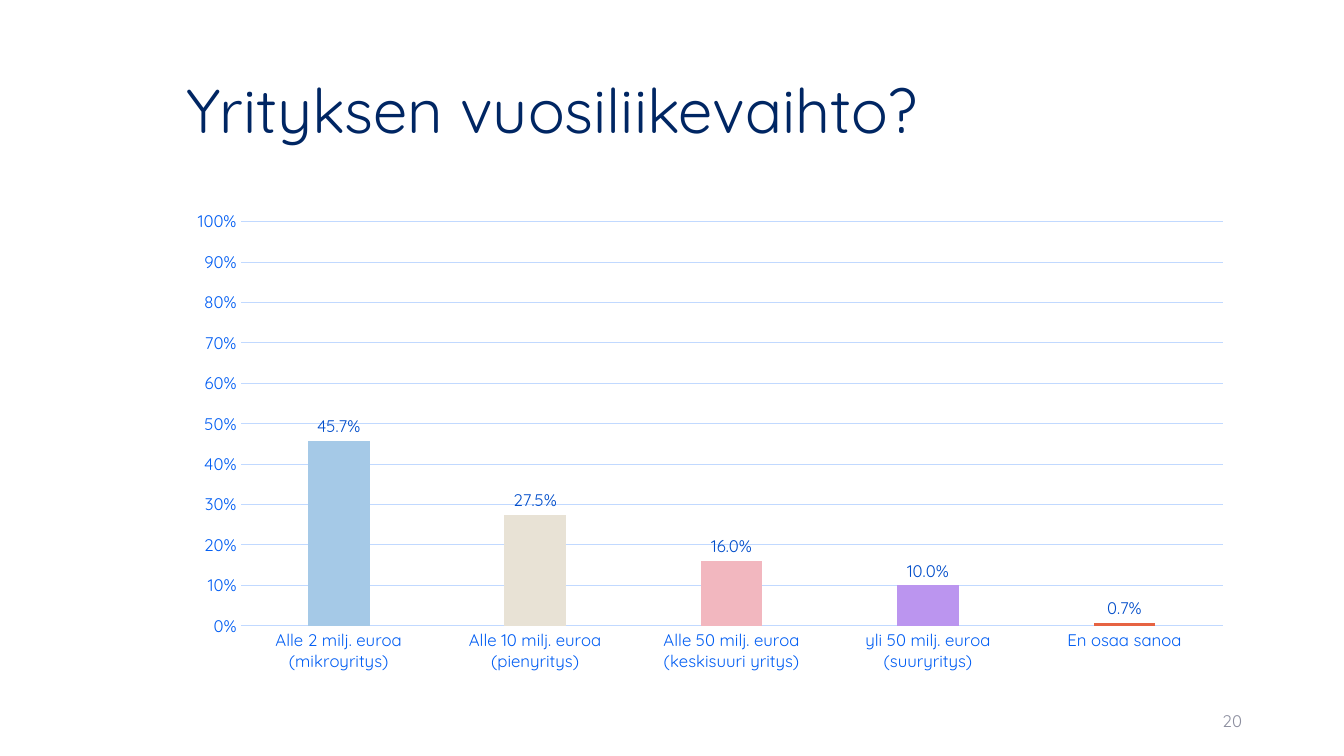
from pptx import Presentation
from pptx.chart.data import CategoryChartData
from pptx.dml.color import RGBColor
from pptx.enum.chart import XL_CHART_TYPE, XL_LABEL_POSITION, XL_TICK_MARK
from pptx.enum.text import MSO_ANCHOR, PP_ALIGN
from pptx.util import Cm, Pt

COLUMN = XL_CHART_TYPE.COLUMN_CLUSTERED
OUTSIDE_END = XL_LABEL_POSITION.OUTSIDE_END
NO_TICK = XL_TICK_MARK.NONE
MIDDLE, TOP = MSO_ANCHOR.MIDDLE, MSO_ANCHOR.TOP
LEFT, RIGHT = PP_ALIGN.LEFT, PP_ALIGN.RIGHT

FONT = "Quicksand"
NAVY = RGBColor(0x00, 0x26, 0x63)
AXIS_BLUE = RGBColor(0x00, 0x5D, 0xF3)
LABEL_BLUE = RGBColor(0x00, 0x4D, 0xCA)
GRID_BLUE = RGBColor(0xC1, 0xD9, 0xFF)
GREY = RGBColor(0x8C, 0x8E, 0x9F)
SKY = RGBColor(0xA5, 0xC9, 0xE7)
SAND = RGBColor(0xE8, 0xE2, 0xD5)
PINK = RGBColor(0xF2, 0xB7, 0xBF)
VIOLET = RGBColor(0xBB, 0x95, 0xEF)
ORANGE = RGBColor(0xE6, 0x63, 0x42)

TITLE = "Yrityksen vuosiliikevaihto?"
PAGE_NUMBER = "20"
TURNOVER = [
    ("Alle 2 milj. euroa (mikroyritys)", 0.457, SKY),
    ("Alle 10 milj. euroa (pienyritys)", 0.275, SAND),
    ("Alle 50 milj. euroa (keskisuuri yritys)", 0.16, PINK),
    ("yli 50 milj. euroa (suuryritys)", 0.1, VIOLET),
    ("En osaa sanoa", 0.007, ORANGE),
]
CONTENT_LEFT, CONTENT_WIDTH = Cm(4.45), Cm(26.9)


def style_font(font, size, color):
    font.name = FONT
    font.size = Pt(size)
    font.color.rgb = color


def style_line(line):
    line.color.rgb = GRID_BLUE
    line.width = Pt(0.75)


def add_text(slide, box, text, size, color, alignment, anchor, spacing):
    frame = slide.shapes.add_textbox(*box).text_frame
    frame.word_wrap = True
    frame.vertical_anchor = anchor
    paragraph = frame.paragraphs[0]
    paragraph.alignment = alignment
    paragraph.line_spacing = spacing
    run = paragraph.add_run()
    run.text = text
    style_font(run.font, size, color)


def add_turnover_chart(slide):
    data = CategoryChartData()
    data.categories = [name for name, share, color in TURNOVER]
    data.add_series("Series 1", [share for name, share, color in TURNOVER])
    chart = slide.shapes.add_chart(
        COLUMN, CONTENT_LEFT, Cm(5.08), CONTENT_WIDTH, Cm(12.09), data
    ).chart
    chart.has_title = False
    chart.has_legend = False
    style_font(chart.font, 10, NAVY)

    for axis in (chart.category_axis, chart.value_axis):
        axis.major_tick_mark = NO_TICK
        axis.minor_tick_mark = NO_TICK
        style_font(axis.tick_labels.font, 12, AXIS_BLUE)
    style_line(chart.category_axis.format.line)

    value_axis = chart.value_axis
    value_axis.minimum_scale = 0
    value_axis.maximum_scale = 1
    value_axis.major_unit = 0.1
    value_axis.tick_labels.number_format = "0%"
    value_axis.tick_labels.number_format_is_linked = False
    value_axis.format.line.fill.background()
    style_line(value_axis.major_gridlines.format.line)

    plot = chart.plots[0]
    plot.gap_width = 219
    plot.overlap = -27
    plot.vary_by_categories = False
    series = plot.series[0]
    for index, (name, share, color) in enumerate(TURNOVER):
        fill = series.points[index].format.fill
        fill.solid()
        fill.fore_color.rgb = color

    labels = series.data_labels
    labels.show_value = True
    labels.position = OUTSIDE_END
    labels.number_format = "0.0%"
    labels.number_format_is_linked = False
    style_font(labels.font, 12, LABEL_BLUE)


def main():
    presentation = Presentation()
    presentation.slide_width = Cm(33.87)
    presentation.slide_height = Cm(19.05)
    slide = presentation.slides.add_slide(presentation.slide_layouts[6])
    title_box = (CONTENT_LEFT, Cm(1.02), CONTENT_WIDTH, Cm(3.68))
    number_box = (Cm(23.93), Cm(17.65), Cm(7.62), Cm(1.02))
    add_text(slide, title_box, TITLE, 44, NAVY, LEFT, MIDDLE, 0.9)
    add_text(slide, number_box, PAGE_NUMBER, 12, GREY, RIGHT, MIDDLE, 1.0)
    add_turnover_chart(slide)
    presentation.save("out.pptx")


if __name__ == "__main__":
    main()
